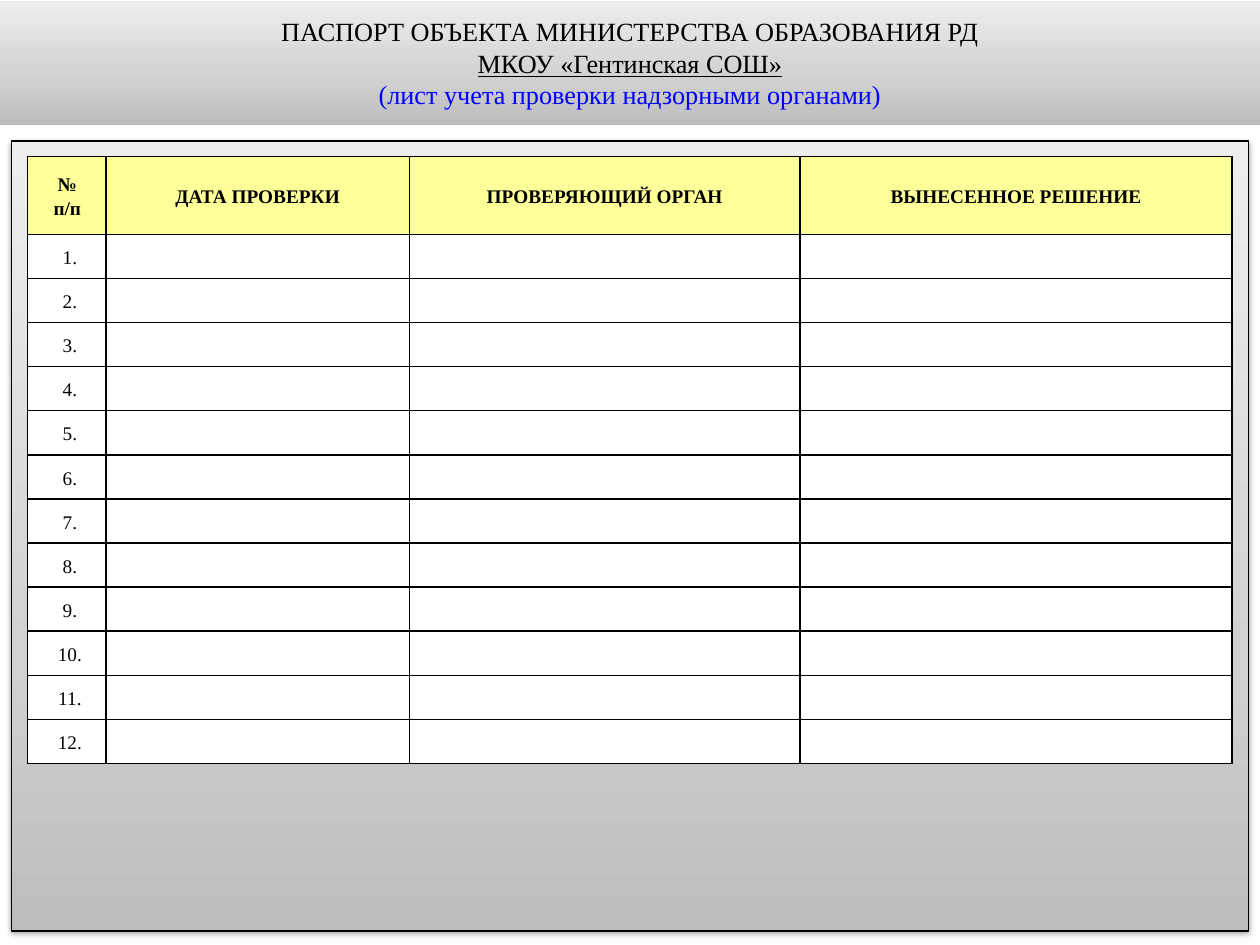
"""Build the inspection record sheet of a school passport."""
from dataclasses import dataclass

from lxml.etree import SubElement
from pptx import Presentation
from pptx.dml.color import RGBColor
from pptx.enum.shapes import MSO_SHAPE as Shape
from pptx.enum.text import MSO_ANCHOR as Anchor, MSO_AUTO_SIZE as AutoSize, PP_ALIGN as Align
from pptx.oxml import parse_xml
from pptx.oxml.ns import nsdecls, qn
from pptx.util import Inches, Pt

BLACK = RGBColor(0x00, 0x00, 0x00)
WHITE = RGBColor(0xFF, 0xFF, 0xFF)
BLUE = RGBColor(0x00, 0x00, 0xFF)
YELLOW = RGBColor(0xFF, 0xFF, 0x99)
BAR_SHADES = RGBColor(0xBC, 0xBC, 0xBC), RGBColor(0xD0, 0xD0, 0xD0), RGBColor(0xED, 0xED, 0xED)
PANEL_SHADES = RGBColor(0xBD, 0xBD, 0xBD), RGBColor(0xD1, 0xD1, 0xD1), RGBColor(0xEE, 0xEE, 0xEE)
SHADE_STOPS = 0, 35, 100
FONT = "Times New Roman"
WIDTH, HEIGHT = Inches(10), Inches(7.5)
ENTRY_COUNT = 12
HEADER_HEIGHT, ENTRY_HEIGHT = Inches(0.62), Inches(0.35)
NUMBER_INDENT = 0.05


@dataclass(frozen=True)
class TitleLine:
    text: str
    color: RGBColor = BLACK
    underline: bool = False


@dataclass(frozen=True)
class Column:
    lines: tuple[str, ...]
    width: float
    indent: float = 0


TITLE_LINES = (
    TitleLine("ПАСПОРТ ОБЪЕКТА МИНИСТЕРСТВА ОБРАЗОВАНИЯ РД"),
    TitleLine("МКОУ «Гентинская СОШ»", underline=True),
    TitleLine("(лист учета проверки надзорными органами)", BLUE),
)
COLUMNS = (
    Column(("№", "п/п"), 0.62, 0.01),
    Column(("ДАТА ПРОВЕРКИ",), 2.41),
    Column(("ПРОВЕРЯЮЩИЙ ОРГАН",), 3.1),
    Column(("ВЫНЕСЕННОЕ РЕШЕНИЕ",), 3.43),
)


def shade(shape, colors: tuple[RGBColor, ...]) -> None:
    """Fill a shape with a gradient rising from the bottom edge."""
    shape.fill.gradient()
    shape.fill.gradient_angle = 90
    stops = shape.element.spPr.find(".//" + qn("a:gsLst"))
    stops.clear()
    for share, color in zip(SHADE_STOPS, colors):
        stop = SubElement(stops, qn("a:gs"), pos=str(share * 1000))
        SubElement(stop, qn("a:srgbClr"), val=str(color))


def add_span(para, text: str, size: float, color: RGBColor = BLACK,
             bold: bool = False, underline: bool = False) -> None:
    """Add one centred run to a paragraph."""
    para.alignment = Align.CENTER
    span = para.add_run()
    span.text = text
    font = span.font
    font.name, font.size, font.bold, font.underline = FONT, Pt(size), bold, underline
    font.color.rgb = color


def fill_title(title) -> None:
    """Place the title bar and write its lines."""
    title.left, title.top, title.width, title.height = 0, Inches(0.01), WIDTH, Inches(0.98)
    shade(title, BAR_SHADES)
    frame = title.text_frame
    frame.auto_size = AutoSize.NONE
    frame.word_wrap = True
    frame.vertical_anchor = Anchor.MIDDLE
    for index, line in enumerate(TITLE_LINES):
        para = frame.add_paragraph() if index else frame.paragraphs[0]
        add_span(para, line.text, 15, line.color, underline=line.underline)


def add_panel(page) -> None:
    """Add the outlined panel with its soft shadow."""
    panel = page.shapes.add_shape(Shape.RECTANGLE, Inches(0.09), Inches(1.12),
                                  Inches(9.82), Inches(6.27))
    shade(panel, PANEL_SHADES)
    panel.line.color.rgb = BLACK
    panel.line.width = Pt(0.75)
    panel.shadow.inherit = False
    effects = panel.element.spPr.find(qn("a:effectLst"))
    effects.append(parse_xml(
        f'<a:outerShdw {nsdecls("a")} blurRad="{Pt(3.1)}" dist="{Pt(1.6)}" dir="5400000" '
        f'rotWithShape="0"><a:srgbClr val="{BLACK}"><a:alpha val="38000"/></a:srgbClr></a:outerShdw>'))


def format_cell(cell, color: RGBColor) -> None:
    """Set the fill, margins, anchor and borders of a cell."""
    cell.fill.solid()
    cell.fill.fore_color.rgb = color
    cell.vertical_anchor = Anchor.MIDDLE
    cell.margin_left = cell.margin_right = Inches(0.03)
    cell.margin_top = cell.margin_bottom = 0
    properties = cell._tc.get_or_add_tcPr()
    for index, side in enumerate("LRTB"):
        properties.insert(index, parse_xml(
            f'<a:ln{side} {nsdecls("a")} w="{Pt(1)}"><a:solidFill><a:srgbClr val="{BLACK}"/>'
            f'</a:solidFill></a:ln{side}>'))


def write_cell(cell, lines: tuple[str, ...], indent: float, bold: bool = False) -> None:
    """Write one paragraph for each line of a cell."""
    frame = cell.text_frame
    for index, text in enumerate(lines):
        para = frame.add_paragraph() if index else frame.paragraphs[0]
        para.line_spacing = 1.15
        para._p.get_or_add_pPr().set("marL", str(Inches(indent)))
        add_span(para, text, 11, bold=bold)


def add_record_table(page) -> None:
    """Add the table with its header and numbered empty entries."""
    frame = page.shapes.add_table(
        ENTRY_COUNT + 1, len(COLUMNS), Inches(0.22), Inches(1.24),
        Inches(sum(column.width for column in COLUMNS)),
        HEADER_HEIGHT + ENTRY_COUNT * ENTRY_HEIGHT)
    table = frame.table
    for number, row in enumerate(table.rows):
        row.height = ENTRY_HEIGHT if number else HEADER_HEIGHT
        for cell in row.cells:
            format_cell(cell, WHITE if number else YELLOW)
        if number:
            write_cell(row.cells[0], (f"{number}.",), NUMBER_INDENT)
    for index, column in enumerate(COLUMNS):
        table.columns[index].width = Inches(column.width)
        write_cell(table.cell(0, index), column.lines, column.indent, bold=True)


def main() -> None:
    """Create the deck and save it."""
    deck = Presentation()
    deck.slide_width, deck.slide_height = WIDTH, HEIGHT
    page = deck.slides.add_slide(deck.slide_layouts[5])
    fill_title(page.shapes.title)
    add_panel(page)
    add_record_table(page)
    deck.save("out.pptx")


if __name__ == "__main__":
    main()
